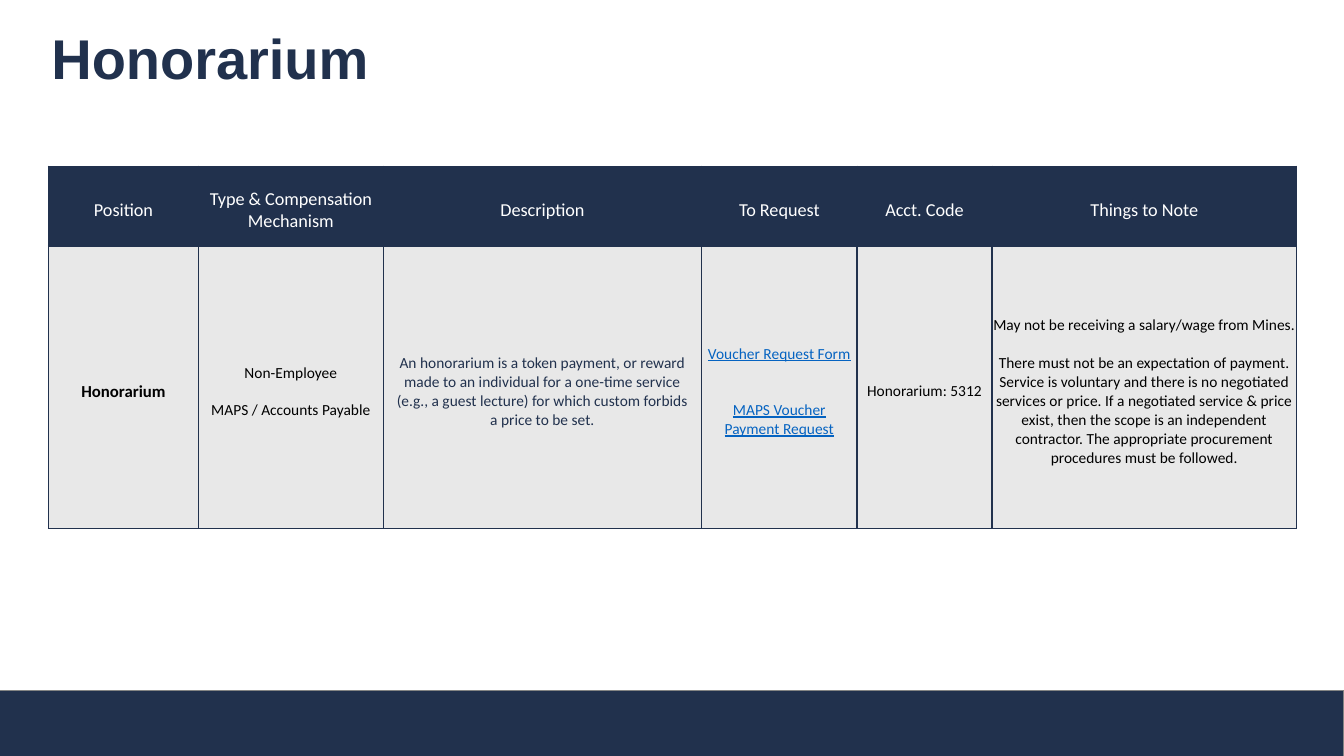
"""Builds the honorarium slide with its payment table."""
from lxml import etree
from pptx import Presentation
from pptx import util as u
from pptx.dml.color import RGBColor
from pptx.enum import shapes, text
from pptx.oxml.ns import qn

COLORS = {"navy": "21314D", "gray": "BFBFBF", "edge": "848584",
          "white": "FFFFFF", "black": "000000", "link": "0563C1"}
LINE = 13.4
HEADINGS = ["Position", "Type & Compensation Mechanism", "Description",
            "To Request", "Acct. Code", "Things to Note"]
WIDTHS = [1.49, 1.83, 3.16, 1.54, 1.34, 3.02]
HEIGHTS = [0.79, 2.8]
DETAILS = [
    ([("Honorarium", 0)], {"size": 12, "bold": True}),
    ([("Non-Employee", 0), ("MAPS / Accounts Payable", LINE)], {}),
    ([("An honorarium is a token payment, or reward made to an individual "
       "for a one-time service", 0),
      ("(e.g., a guest lecture) for which custom forbids", 0),
      ("a price to be set.", 0)], {"color": "navy"}),
    ([("Voucher Request Form", 0), ("MAPS Voucher", 2 * LINE),
      ("Payment Request", 0)], {"color": "link", "underline": True}),
    ([("Honorarium: 5312", 0)], {}),
    ([("May not be receiving a salary/wage from Mines.", 0),
      ("There must not be an expectation of payment. Service is voluntary and "
       "there is no negotiated services or price. If a negotiated service & "
       "price exist, then the scope is an independent contractor. The "
       "appropriate procurement procedures must be followed.", LINE)], {}),
]


class Deck:
    def __init__(self):
        self.prs = Presentation()
        self.prs.slide_width = u.Inches(13.33)
        self.prs.slide_height = u.Inches(7.5)
        self.slide = self.prs.slides.add_slide(self.prs.slide_layouts[5])

    def color(self, name):
        return RGBColor.from_string(COLORS[name])

    def add_words(self, paragraph, words, font="Calibri", size=11,
                  color="black", bold=False, underline=False):
        run = paragraph.add_run()
        run.text = words
        run.font.name = font
        run.font.size = u.Pt(size)
        run.font.bold = bold
        run.font.underline = underline
        run.font.color.rgb = self.color(color)

    def title(self, words, left, top, width, height):
        heading = self.slide.shapes.title
        heading.left, heading.top = u.Inches(left), u.Inches(top)
        heading.width, heading.height = u.Inches(width), u.Inches(height)
        frame = heading.text_frame
        frame.auto_size = text.MSO_AUTO_SIZE.NONE
        frame.vertical_anchor = text.MSO_ANCHOR.MIDDLE
        paragraph = frame.paragraphs[0]
        paragraph.alignment = text.PP_ALIGN.LEFT
        paragraph.line_spacing = 0.9
        self.add_words(paragraph, words, "Arial", 40, "navy", bold=True)

    def band(self, left, top, width, height):
        footer = self.slide.shapes.add_shape(
            shapes.MSO_SHAPE.RECTANGLE, u.Inches(left), u.Inches(top),
            u.Inches(width), u.Inches(height))
        footer.shadow.inherit = False
        footer.fill.solid()
        footer.fill.fore_color.rgb = self.color("navy")
        footer.line.color.rgb = self.color("edge")
        footer.line.width = u.Pt(1)

    def table(self, left, top, widths, heights):
        grid = self.slide.shapes.add_table(
            len(heights), len(widths), u.Inches(left), u.Inches(top),
            u.Inches(sum(widths)), u.Inches(sum(heights))).table
        grid.first_row = grid.horz_banding = False
        for column, width in zip(grid.columns, widths):
            column.width = u.Inches(width)
        for row, height in zip(grid.rows, heights):
            row.height = u.Inches(height)
        return grid

    def cell(self, cell, lines, fill, alpha=100, **style):
        cell.vertical_anchor = text.MSO_ANCHOR.MIDDLE
        cell.margin_left = cell.margin_right = cell.margin_bottom = 0
        cell.margin_top = u.Inches(0.09)
        cell.fill.solid()
        cell.fill.fore_color.rgb = self.color(fill)
        props = cell._tc.get_or_add_tcPr()
        if alpha < 100:
            shade = props.find(f"{qn('a:solidFill')}/{qn('a:srgbClr')}")
            etree.SubElement(shade, qn("a:alpha"), val=str(alpha * 1000))
        for index, side in enumerate("LRTB"):
            border = etree.Element(qn(f"a:ln{side}"), w=str(u.Pt(1)))
            solid = etree.SubElement(border, qn("a:solidFill"))
            etree.SubElement(solid, qn("a:srgbClr"), val=COLORS["navy"])
            props.insert(index, border)
        frame = cell.text_frame
        for index, (words, gap) in enumerate(lines):
            paragraph = frame.add_paragraph() if index else frame.paragraphs[0]
            paragraph.alignment = text.PP_ALIGN.CENTER
            if gap:
                paragraph.space_before = u.Pt(gap)
            self.add_words(paragraph, words, **style)


def main():
    deck = Deck()
    deck.band(-0.01, 6.85, 13.34, 0.66)
    deck.title("Honorarium", 0.41, 0.21, 11.5, 0.8)
    payments = deck.table(0.48, 1.65, WIDTHS, HEIGHTS)
    for column, (heading, (lines, style)) in enumerate(zip(HEADINGS, DETAILS)):
        deck.cell(payments.cell(0, column), [(heading, 0)], "navy",
                  size=13, color="white")
        deck.cell(payments.cell(1, column), lines, "gray", alpha=35, **style)
    deck.prs.save("out.pptx")


if __name__ == "__main__":
    main()
